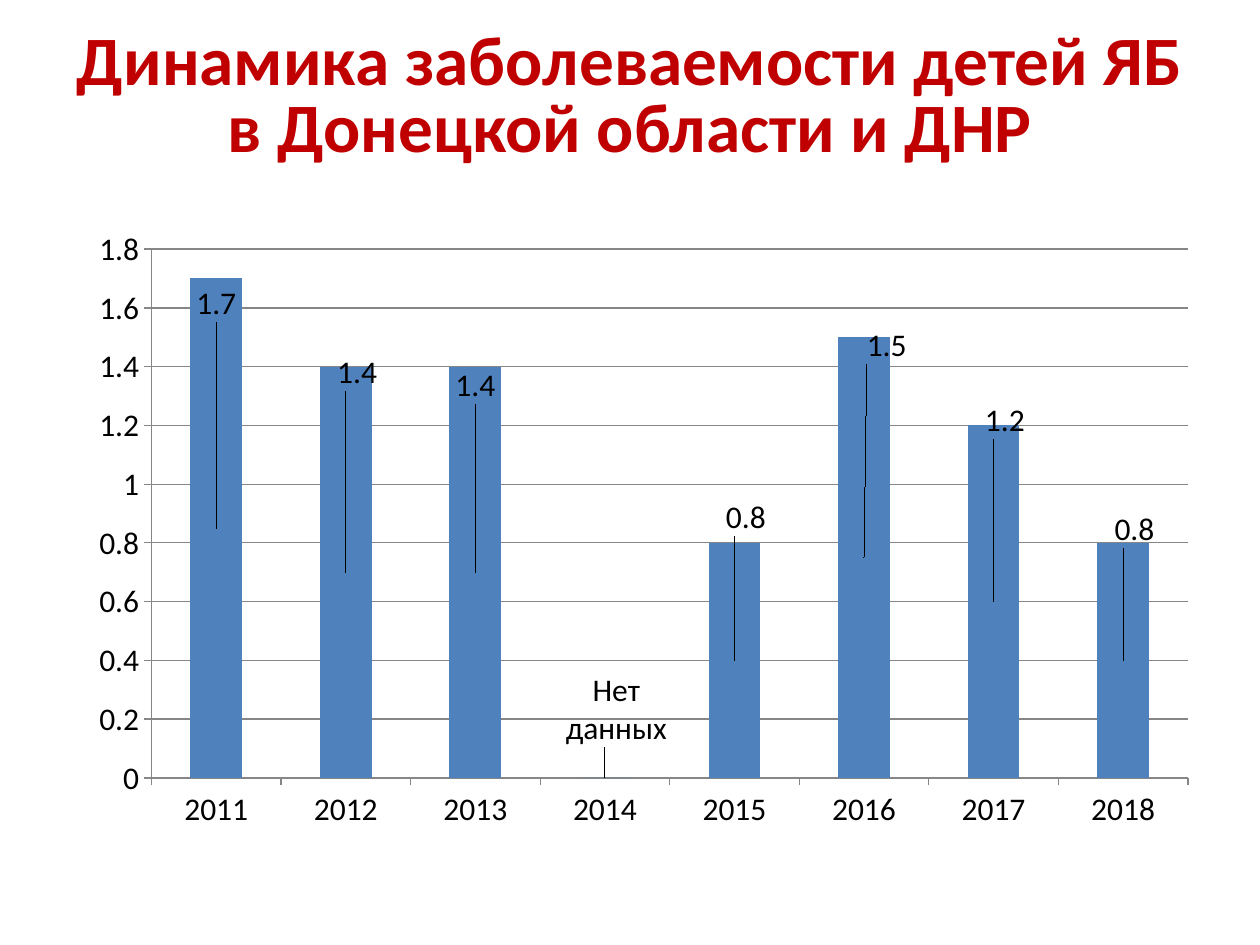
from lxml import etree
from pptx import Presentation
from pptx.chart.data import CategoryChartData
from pptx.dml.color import RGBColor
from pptx.enum import chart as charts, text
from pptx.oxml.ns import qn
from pptx.util import Inches, Pt

WIDTH, HEIGHT = 10, 7.5
YEARS = [str(year) for year in range(2011, 2019)]
RATES = [1.7, 1.4, 1.4, None, 0.8, 1.5, 1.2, 0.8]
MISSING = "Нет\nданных"
PLOT = {"x": 0.067, "y": 0.051, "w": 0.914, "h": 0.848}
LABEL_SHIFTS = [(0, -0.36), (0.01, -0.32), (0, -0.3), (0.01, -0.11),
                (0.01, -0.23), (0.02, -0.34), (0.01, -0.29), (0.01, -0.21)]


def color(value):
    return RGBColor.from_string(value)


class SlideBuilder:
    """Holds the style and the current slide and adds elements to it."""

    font, ink, accent, bar, line = "Calibri", "000000", "C00000", "4F81BD", "868686"

    def __init__(self, presentation):
        self.slide = presentation.slides.add_slide(presentation.slide_layouts[6])

    def box(self, left, top, width, height):
        return (Inches(left * WIDTH), Inches(top * HEIGHT),
                Inches(width * WIDTH), Inches(height * HEIGHT))

    def style(self, font, size, ink, bold=False):
        font.name, font.size, font.bold = self.font, Pt(size), bold
        font.color.rgb = color(ink)

    def title(self, wording, *place):
        frame = self.slide.shapes.add_textbox(*self.box(*place)).text_frame
        frame.word_wrap = True
        frame.vertical_anchor = text.MSO_ANCHOR.MIDDLE
        frame.text = wording
        paragraph = frame.paragraphs[0]
        paragraph.alignment = text.PP_ALIGN.CENTER
        paragraph.line_spacing = 0.8
        self.style(paragraph.runs[0].font, 39.6, self.accent, True)

    def layout(self, values, inner=False):
        layout = etree.Element(qn("c:layout"))
        manual = etree.SubElement(layout, qn("c:manualLayout"))
        settings = {"layoutTarget": "inner", "xMode": "edge", "yMode": "edge"} if inner else {}
        for name, value in {**settings, **values}.items():
            etree.SubElement(manual, qn(f"c:{name}")).set("val", str(value))
        return layout

    def column_chart(self, categories, values, *place):
        data = CategoryChartData()
        data.categories = categories
        data.add_series("Series 1", values)
        chart = self.slide.shapes.add_chart(
            charts.XL_CHART_TYPE.COLUMN_STACKED, *self.box(*place), data).chart
        chart.has_legend = chart.has_title = False
        self.style(chart.font, 18, self.ink)
        plot = chart.plots[0]
        plot.gap_width, plot.overlap, plot.vary_by_categories = 150, 100, False
        axis = chart.value_axis
        axis.minimum_scale, axis.maximum_scale, axis.major_unit = 0, 1.8, 0.2
        axis.tick_labels.number_format = "General"
        axis.tick_labels.number_format_is_linked = False
        for part in (axis, chart.category_axis, axis.major_gridlines):
            part.format.line.color.rgb = color(self.line)
            part.format.line.width = Pt(0.75)
        series = plot.series[0]
        series.format.fill.solid()
        series.format.fill.fore_color.rgb = color(self.bar)
        self.labels(series, values)
        area = chart.element.find(".//" + qn("c:plotArea"))
        for default in area.findall(qn("c:layout")):
            area.remove(default)
        area.insert(0, self.layout(PLOT, inner=True))
        chart.element.find(".//" + qn("c:dispBlanksAs")).set("val", "zero")

    def labels(self, series, values):
        series.data_labels.show_value = True
        for index, value in enumerate(values):
            label = series.points[index].data_label
            if value is None:
                label.text_frame.text = MISSING
                for paragraph in label.text_frame.paragraphs:
                    self.style(paragraph.runs[0].font, 18, self.ink)
            else:
                self.style(label.font, 18, self.ink)
        elements = series.data_labels._element.findall(qn("c:dLbl"))
        for element, (x, y) in zip(elements, LABEL_SHIFTS):
            for default in element.findall(qn("c:layout")):
                element.remove(default)
            element.insert(1, self.layout({"x": x, "y": y}))


def main():
    presentation = Presentation()
    presentation.slide_width, presentation.slide_height = Inches(WIDTH), Inches(HEIGHT)
    builder = SlideBuilder(presentation)
    builder.title("Динамика заболеваемости детей ЯБ в Донецкой области и ДНР",
                  0.05, 0.04, 0.9, 0.13)
    builder.column_chart(YEARS, RATES, 0.06, 0.23, 0.9, 0.66)
    presentation.save("out.pptx")


if __name__ == "__main__":
    main()
